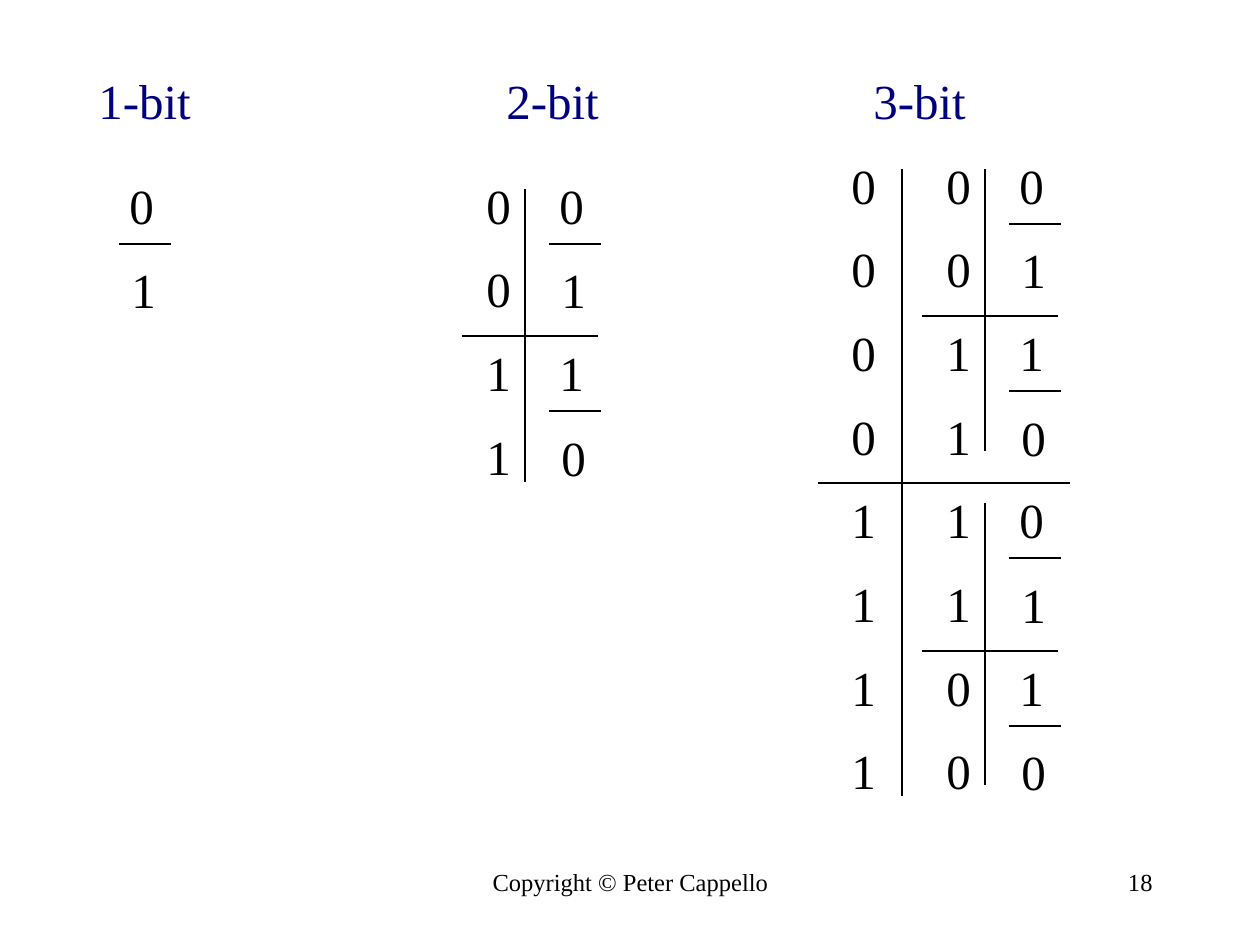
from lxml.etree import SubElement
from pptx import Presentation
from pptx.dml.color import RGBColor
from pptx.enum.shapes import MSO_CONNECTOR
from pptx.enum.text import MSO_AUTO_SIZE, PP_ALIGN
from pptx.oxml.ns import qn
from pptx.util import Emu, Pt

SCALE = 914400 / 126  # EMU per px
COLORS = {"title": "00007F", "ink": "000000"}

deck = Presentation()
deck.slide_width, deck.slide_height = Emu(int(1260 * SCALE)), Emu(int(945 * SCALE))
slide = deck.slides.add_slide(deck.slide_layouts[6])


def write(text, x, y, w=50, h=72, size=28, color="ink", align=PP_ALIGN.LEFT, wrap=False):
    box = slide.shapes.add_textbox(*(Emu(int(n * SCALE)) for n in (x, y, w, h)))
    frame = box.text_frame
    frame.word_wrap = wrap
    frame.auto_size = MSO_AUTO_SIZE.NONE if wrap else MSO_AUTO_SIZE.SHAPE_TO_FIT_TEXT
    par = frame.paragraphs[0]
    par.alignment = align
    run = par.add_run()
    run.text = text
    run.font.name = "Times New Roman"
    run.font.size = Pt(size)
    run.font.color.rgb = RGBColor.from_string(COLORS[color])


def rule(*ends):
    """Draw a thin line through x1, y1, x2, y2."""
    line = slide.shapes.add_connector(
        MSO_CONNECTOR.STRAIGHT, *(Emu(int(n * SCALE)) for n in ends))
    line.line.color.rgb = RGBColor.from_string(COLORS["ink"])
    line.line.width = Pt(0.75)
    SubElement(line._element.spPr, qn("a:effectLst"))


write("Copyright © Peter Cappello", 431, 861, 399, 63, size=14,
      align=PP_ALIGN.CENTER, wrap=True)
write("18", 903, 861, 262, 63, size=14, align=PP_ALIGN.RIGHT, wrap=True)

# Title left, top of the first row, left of each bit column
codes = [
    (86, 169, [117]),
    (494, 169, [474, 547]),
    (861, 149, [839, 934, 1007]),
]
for left, top, cols in codes:
    bits = len(cols)
    write(f"{bits}-bit", left, 64, 120, color="title")
    rows = [top + i * 251 // 3 for i in range(2 ** bits)]

    # Gray code; the mirrored row of each pair sits slightly lower right
    for i, y in enumerate(rows):
        for x, bit in zip(cols, f"{i ^ i >> 1:0{bits}b}"):
            shift = i % 2 if x == cols[-1] else 0
            write(bit, x + 2 * shift, y + shift)

    # Mirror line inside each pair
    for y in rows[::2]:
        rule(cols[-1] + 2, y + 75, cols[-1] + 54, y + 75)

    # Cross inside each block of four
    tall = 293 if bits == 2 else 282
    for i in range(0, len(rows) - 3, 4):
        x, y, mid = cols[-2], rows[i] + 20, rows[i + 2]
        rule(x + 51, y, x + 51, y + tall)
        rule(x - 12, mid, x + 124, mid)

    # Cross through the whole block of eight
    if bits == 3:
        rule(902, top + 20, 902, top + 647)
        rule(818, rows[4], 1070, rows[4])

deck.save("out.pptx")
